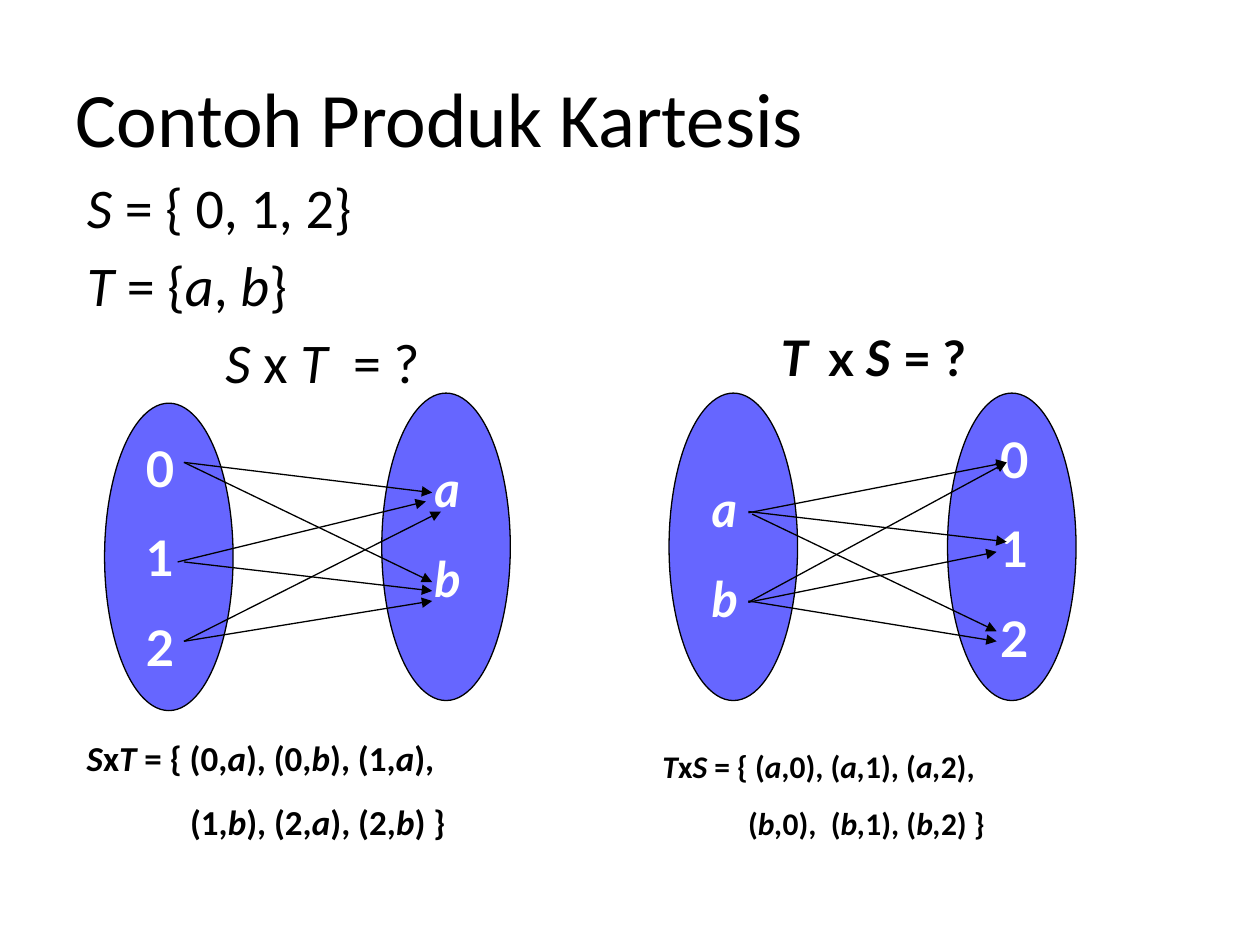
from dataclasses import dataclass
from typing import NamedTuple

from lxml.etree import SubElement
from pptx import Presentation
from pptx.dml.color import RGBColor
from pptx.enum.shapes import MSO_CONNECTOR as Link, MSO_SHAPE as Kind
from pptx.enum.text import MSO_ANCHOR as Anchor, PP_ALIGN as Align
from pptx.oxml.ns import qn
from pptx.util import Inches, Pt

BLACK = RGBColor(0x00, 0x00, 0x00)
WHITE = RGBColor(0xFF, 0xFF, 0xFF)
VIOLET = RGBColor(0x66, 0x66, 0xFF)

COLS, ROWS = 10, 7.5
WIDTH, HEIGHT = Inches(COLS), Inches(ROWS)
OVAL_W, OVAL_H = 1.02, 2.44
ITEM_W = 0.47
LINE = Pt(0.75)


class Box(NamedTuple):
    """Place on the grid, in columns and rows."""
    x: float
    y: float
    w: float
    h: float


class Arrow(NamedTuple):
    x1: float
    y1: float
    x2: float
    y2: float


@dataclass
class Domain:
    """An oval with its elements; x and y place the oval, text_x and text_y the list."""
    x: float
    y: float
    text_x: float
    text_y: float
    items: list[str]


@dataclass
class Mapping:
    left: Domain
    right: Domain
    arrows: list[Arrow]


NUMS, LETTERS = ["0", "1", "2"], ["*a*", "*b*"]

S_TO_T = Mapping(
    Domain(0.83, 3.2, 1.06, 3.43, NUMS),
    Domain(3.03, 3.12, 3.35, 3.59, LETTERS),
    [
        Arrow(1.46, 3.67, 3.43, 4.62),
        Arrow(1.46, 3.67, 3.43, 3.91),
        Arrow(1.41, 4.46, 3.38, 3.98),
        Arrow(1.46, 4.46, 3.43, 4.69),
        Arrow(1.46, 5.09, 3.5, 4.06),
        Arrow(1.46, 5.09, 3.43, 4.77),
    ],
)
T_TO_S = Mapping(
    Domain(5.31, 3.12, 5.55, 3.75, LETTERS),
    Domain(7.52, 3.12, 7.84, 3.36, NUMS),
    [
        Arrow(5.94, 4.07, 7.99, 3.67),
        Arrow(5.94, 4.06, 7.99, 4.3),
        Arrow(5.97, 4.08, 7.91, 5.01),
        Arrow(5.94, 4.78, 7.99, 3.67),
        Arrow(5.94, 4.78, 7.91, 4.38),
        Arrow(5.94, 4.77, 7.91, 5.09),
    ],
)


def col(n: float) -> int:
    return round(WIDTH * n / COLS)


def row(n: float) -> int:
    return round(HEIGHT * n / ROWS)


def place(box: Box) -> tuple[int, int, int, int]:
    return col(box.x), row(box.y), col(box.w), row(box.h)


def write(frame, lines: list[str], *, size: float, font="Calibri", color=BLACK,
          bold=False, gap=0.0, indent=0.0, anchor=Anchor.TOP) -> None:
    """Fill a frame; *stars* mark italics, and indent moves the last line."""
    frame.word_wrap = True
    frame.vertical_anchor = anchor
    for i, line in enumerate(lines):
        para = frame.paragraphs[0] if i == 0 else frame.add_paragraph()
        para.alignment = Align.LEFT
        para.space_before = Pt(gap if i else 0)
        if indent and i == len(lines) - 1:
            para._p.get_or_add_pPr().set("marL", str(col(indent)))
        for j, part in enumerate(line.split("*")):
            if part:
                run = para.add_run()
                run.text = part
                face = run.font
                face.name, face.size = font, Pt(size)
                face.bold, face.italic = bold, j % 2 == 1
                face.color.rgb = color


def add_text(shapes, box: Box, lines: list[str], **style) -> None:
    write(shapes.add_textbox(*place(box)).text_frame, lines, **style)


def add_domain(shapes, dom: Domain) -> None:
    group = shapes.add_group_shape().shapes
    oval = group.add_shape(Kind.OVAL, *place(Box(dom.x, dom.y, OVAL_W, OVAL_H)))
    oval.shadow.inherit = False
    oval.fill.solid()
    oval.fill.fore_color.rgb = VIOLET
    oval.line.color.rgb = BLACK
    oval.line.width = LINE
    area = Box(dom.text_x, dom.text_y, ITEM_W, 0.71 * len(dom.items) - 0.14)
    add_text(group, area, dom.items, size=28, font="Lato", color=WHITE,
             bold=True, gap=17.5)


def add_arrow(shapes, arrow: Arrow) -> None:
    link = shapes.add_connector(Link.STRAIGHT, col(arrow.x1), row(arrow.y1),
                                col(arrow.x2), row(arrow.y2))
    link.line.color.rgb = BLACK
    link.line.width = LINE
    SubElement(link.line._get_or_add_ln(), qn("a:tailEnd"), type="triangle")
    SubElement(link._element.spPr, qn("a:effectLst"))


def add_mapping(shapes, pair: Mapping) -> None:
    add_domain(shapes, pair.left)
    add_domain(shapes, pair.right)
    for arrow in pair.arrows:
        add_arrow(shapes, arrow)


def main() -> None:
    deck = Presentation()
    deck.slide_width, deck.slide_height = WIDTH, HEIGHT
    shapes = deck.slides.add_slide(deck.slide_layouts[5]).shapes

    title = shapes.title
    title.left, title.top, title.width, title.height = place(Box(0.5, 0.3, 9, 1.25))
    write(title.text_frame, ["Contoh Produk Kartesis"], size=44, anchor=Anchor.MIDDLE)

    add_text(shapes, Box(0.59, 1.32, 4.82, 1.9),
             ["*S* = { 0, 1, 2}", "*T* = {*a*, *b*}", "*S *x *T*  = ?"],
             size=32, gap=6, indent=1.1)
    add_mapping(shapes, S_TO_T)
    add_text(shapes, Box(0.59, 5.8, 3.86, 0.94),
             ["*S*x*T* = { (0,*a*), (0,*b*), (1,*a*),", "(1,*b*), (2,*a*), (2,*b*) }"],
             size=20, bold=True, gap=12.5, indent=0.82)

    add_text(shapes, Box(6.1, 2.55, 2.36, 0.57), ["*T  *x *S* = ?"],
             size=28, font="Lato", bold=True)
    add_mapping(shapes, T_TO_S)
    add_text(shapes, Box(5.16, 5.88, 3.86, 0.86),
             ["*T*x*S* = { (*a*,0), (*a,*1), (*a,*2),", "(*b,*0),  (*b,*1), (*b,*2) }"],
             size=18, bold=True, gap=11.2, indent=0.68)

    deck.save("out.pptx")


if __name__ == "__main__":
    main()
